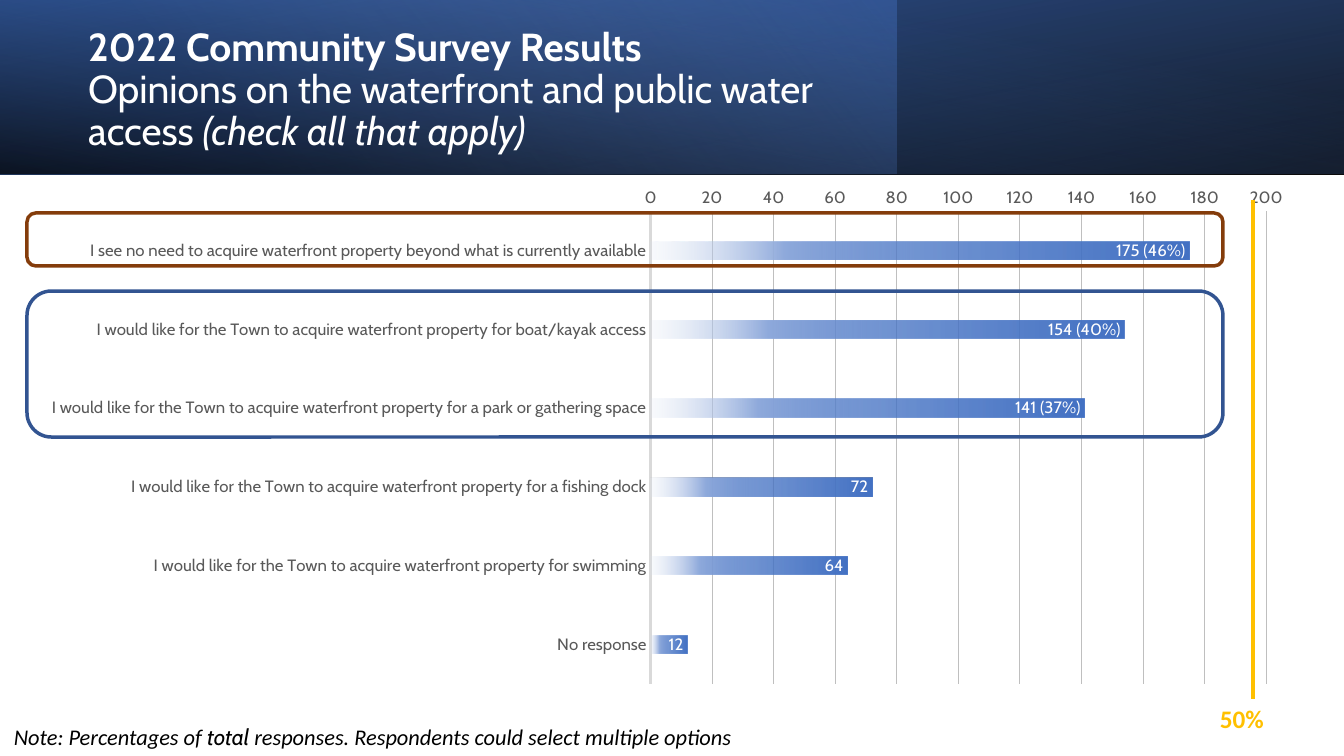
import lxml.etree
import pptx
import pptx.chart.data
import pptx.dml.color
import pptx.enum.chart
import pptx.enum.shapes
import pptx.enum.text
import pptx.oxml
import pptx.oxml.ns
import pptx.util

EMU_PER_PX = 914400 / 100.8
COLORS = {
    "white": "FFFFFF", "black": "000000", "blue": "4472C4", "sky": "8FAADC",
    "pale": "DAE3F3", "navy": "2F5597", "outline": "325491", "brown": "843C0B",
    "gold": "FFC000", "gray": "595959", "axis": "D9D9D9", "grid": "BFBFBF",
}
HEADING, BODY = "Cabin", "Calibri"


def px(*lengths):
    return [pptx.util.Emu(round(length * EMU_PER_PX)) for length in lengths]


def rgb(name):
    return pptx.dml.color.RGBColor.from_string(COLORS[name])


class SurveySlide:
    def __init__(self, presentation):
        self.slide = presentation.slides.add_slide(presentation.slide_layouts[5])
        self.shapes = self.slide.shapes

    def style_font(self, font, size, color, name=HEADING, bold=False, italic=False):
        font.size, font.name = pptx.util.Pt(size), name
        font.bold, font.italic = bold, italic
        font.color.rgb = rgb(color)

    def style_line(self, line, color, width):
        line.color.rgb = rgb(color)
        line.width = pptx.util.Pt(width)

    def gradient(self, fill, properties, stops, angle):
        """Stops are (position %, color, opacity %); the angle is clockwise."""
        fill.solid()
        solid = properties.find(pptx.oxml.ns.qn("a:solidFill"))
        stop_xml = "".join(
            f'<a:gs pos="{position * 1000}"><a:srgbClr val="{COLORS[color]}">'
            f'<a:alpha val="{opacity * 1000}"/></a:srgbClr></a:gs>'
            for position, color, opacity in stops)
        properties.replace(solid, pptx.oxml.parse_xml(
            f'<a:gradFill rotWithShape="1" {pptx.oxml.ns.nsdecls("a")}>'
            f'<a:gsLst>{stop_xml}</a:gsLst>'
            f'<a:lin ang="{angle * 60000}" scaled="0"/></a:gradFill>'))

    def band(self, box, stops, angle, rotation=0, flip=False):
        shape = self.shapes.add_shape(
            pptx.enum.shapes.MSO_SHAPE.RECTANGLE, *px(*box))
        shape.shadow.inherit = False
        shape.line.fill.background()
        shape.rotation = rotation
        if flip:
            shape._element.spPr.xfrm.set("flipH", "1")
        self.gradient(shape.fill, shape._element.spPr, stops, angle)

    def frame(self, box, color):
        shape = self.shapes.add_shape(
            pptx.enum.shapes.MSO_SHAPE.ROUNDED_RECTANGLE, *px(*box))
        shape.shadow.inherit = False
        shape.fill.background()
        self.style_line(shape.line, color, 2.5)

    def title(self, box, heading, runs, size):
        shape = self.shapes.title
        self.shapes._spTree.append(shape._element)  # bring in front of the bands
        shape.left, shape.top, shape.width, shape.height = px(*box)
        text_frame = shape.text_frame
        text_frame.auto_size = pptx.enum.text.MSO_AUTO_SIZE.NONE
        text_frame.vertical_anchor = pptx.enum.text.MSO_ANCHOR.MIDDLE
        text_frame.text = heading
        paragraph = text_frame.paragraphs[0]
        paragraph.alignment = pptx.enum.text.PP_ALIGN.LEFT
        paragraph.line_spacing = 0.9
        self.style_font(paragraph.runs[0].font, size, "white", bold=True)
        paragraph.add_line_break()
        for text, italic in runs:
            run = paragraph.add_run()
            run.text = text
            self.style_font(run.font, size, "white", italic=italic)

    def label(self, box, runs, size, color, **style):
        text_frame = self.shapes.add_textbox(*px(*box)).text_frame
        text_frame.word_wrap = False
        text_frame.auto_size = pptx.enum.text.MSO_AUTO_SIZE.SHAPE_TO_FIT_TEXT
        for text, name in runs:
            run = text_frame.paragraphs[0].add_run()
            run.text = text
            self.style_font(run.font, size, color, name, **style)

    def line(self, start, end, color, width):
        connector = self.shapes.add_connector(
            pptx.enum.shapes.MSO_CONNECTOR.STRAIGHT, *px(*start, *end))
        self.style_line(connector.line, color, width)
        lxml.etree.SubElement(
            connector._element.spPr, pptx.oxml.ns.qn("a:effectLst"))

    def bar_chart(self, box, answers, point_labels, plot_layout):
        data = pptx.chart.data.CategoryChartData()
        data.categories = list(answers)
        data.add_series("Series 1", list(answers.values()))
        enums = pptx.enum.chart
        chart = self.shapes.add_chart(
            enums.XL_CHART_TYPE.BAR_CLUSTERED, *px(*box), data).chart
        chart.has_legend = chart.has_title = False
        self.style_font(chart.font, 10, "black", BODY)

        # Axes
        categories, values = chart.category_axis, chart.value_axis
        for axis in (categories, values):
            axis.major_tick_mark = axis.minor_tick_mark = enums.XL_TICK_MARK.NONE
            self.style_font(axis.tick_labels.font, 12, "gray")
        categories.reverse_order = True
        categories.crosses = enums.XL_AXIS_CROSSES.MAXIMUM
        self.style_line(categories.format.line, "axis", 1.5)
        values.minimum_scale, values.maximum_scale, values.major_unit = 0, 200, 20
        values.format.line.fill.background()
        self.style_line(values.major_gridlines.format.line, "grid", 0.75)

        # Bars
        plot = chart.plots[0]
        plot.gap_width, plot.overlap, plot.vary_by_categories = 326, -58, False
        series = plot.series[0]
        self.gradient(
            series.format.fill, series._element.spPr,
            [(0, "blue", 100), (51, "blue", 75), (75, "sky", 100), (100, "pale", 15)],
            180)

        # Bar labels
        labels = series.data_labels
        labels.show_value = True
        labels.position = enums.XL_LABEL_POSITION.INSIDE_END
        self.style_font(labels.font, 12, "white")
        for index, text in enumerate(point_labels):
            data_label = series.points[index].data_label
            data_label.text_frame.text = text
            data_label.position = enums.XL_LABEL_POSITION.INSIDE_END
            run = data_label.text_frame.paragraphs[0].runs[0]
            self.style_font(run.font, 12, "white")

        # Plot area position, as fractions of the chart
        plot_area = chart._chartSpace.chart.plotArea
        for old in plot_area.findall(pptx.oxml.ns.qn("c:layout")):
            plot_area.remove(old)
        sizes = "".join(f'<c:{key} val="{value}"/>'
                        for key, value in zip("xywh", plot_layout))
        plot_area.insert(0, pptx.oxml.parse_xml(
            f'<c:layout {pptx.oxml.ns.nsdecls("c")}><c:manualLayout>'
            '<c:layoutTarget val="inner"/><c:xMode val="edge"/>'
            f'<c:yMode val="edge"/>{sizes}</c:manualLayout></c:layout>'))


def main():
    presentation = pptx.Presentation()
    presentation.slide_width, presentation.slide_height = px(1344, 756)
    survey = SurveySlide(presentation)

    # Header
    header = (0, 0, 1344, 174)
    survey.band(header, [(0, "black", 96), (100, "navy", 100)], 100, 180, True)
    survey.band((0, 0, 897, 174), [(0, "blue", 41), (74, "sky", 0)], 140)
    survey.band(header, [(0, "black", 63), (78, "blue", 15)], 260, flip=True)
    survey.title(
        (78, 27, 778, 128), "2022 Community Survey Results",
        [("Opinions on the waterfront and public water access ", False),
         ("(check all that apply)", True)], 27.9)

    # Note
    survey.label(
        (4, 718, 748, 37),
        [("Note: Percentages of ", BODY), ("total", HEADING),
         (" responses. Respondents could select multiple options", BODY)],
        16, "black", italic=True)

    # Survey answers
    wish = "I would like for the Town to acquire waterfront property for "
    answers = {
        "I see no need to acquire waterfront property beyond what is "
        "currently available": 175,
        wish + "boat/kayak access": 154,
        wish + "a park or gathering space": 141,
        wish + "a fishing dock": 72,
        wish + "swimming": 64,
        "No response": 12,
    }
    survey.bar_chart((27, 188, 1283, 530), answers,
                     ["175 (46%)", "154 (40%)", "141 (37%)"],
                     (0.486, 0.02, 0.48, 0.914))

    # Highlights and the 50% mark
    survey.frame((27, 291, 1196, 146), "outline")
    survey.frame((27, 213, 1196, 53), "brown")
    survey.line((1253, 200), (1253, 699), "gold", 2.25)
    survey.label((1210, 698, 65, 40), [("50%", BODY)], 18, "gold", bold=True)

    presentation.save("out.pptx")


if __name__ == "__main__":
    main()
